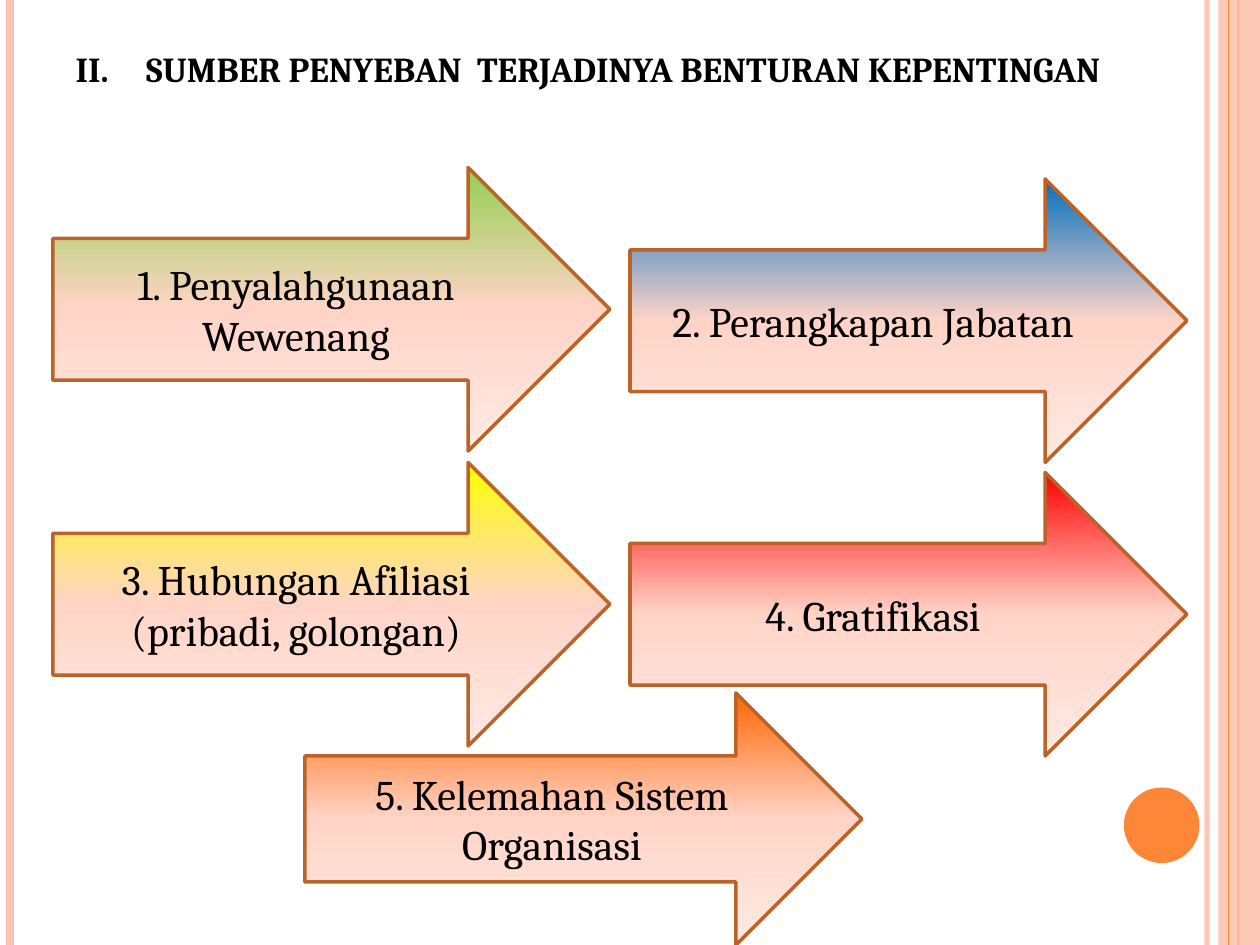
from copy import deepcopy
from dataclasses import dataclass

from lxml import etree
from pptx import Presentation
from pptx.dml.color import RGBColor
from pptx.enum import shapes, text
from pptx.oxml.ns import qn
from pptx.util import Inches, Pt


@dataclass(frozen=True)
class Theme:
    font: str = "Cambria"
    heading_size: int = 20
    label_size: int = 24
    ink: str = "000000"
    accent: str = "FE8637"
    pale: str = "FEC3AE"
    outline: str = "BC6329"
    middle: str = "FFD4C7"
    bottom: str = "FFEAE4"


theme = Theme()


def set_opacity(element, percent):
    color = element.find(".//" + qn("a:srgbClr"))
    etree.SubElement(color, qn("a:alpha")).set("val", str(percent * 1000))


def add_text(para, words, size, bold=False):
    span = para.add_run()
    span.text = words
    span.font.name = theme.font
    span.font.size = Pt(size)
    span.font.bold = bold
    span.font.color.rgb = RGBColor.from_string(theme.ink)


deck = Presentation()
deck.slide_width, deck.slide_height = Inches(10), Inches(7.5)
page = deck.slides.add_slide(deck.slide_layouts[1])
title = page.shapes.title
title.element.getparent().remove(title.element)

# Side stripes: x, colour, width, opacity; the band lies under the last line
stripes = [
    (9.58, theme.pale, 3, 93),
    (0.08, theme.pale, 4.5, 100),
    (9.83, theme.accent, 1.5, 100),
    (9.75, theme.accent, 0.75, 100),
]
for x, color, width, opacity in stripes:
    if x == 9.75:
        band = page.shapes.add_shape(shapes.MSO_SHAPE.RECTANGLE, Inches(9.67), 0,
                                     Inches(0.33), Inches(7.5))
        band.shadow.inherit = False
        band.fill.solid()
        band.fill.fore_color.rgb = RGBColor.from_string(theme.pale)
        set_opacity(band.element.spPr, 87)
        band.line.fill.background()
    stripe = page.shapes.add_connector(shapes.MSO_CONNECTOR.STRAIGHT, Inches(x), 0,
                                       Inches(x), Inches(7.5))
    stripe.line.color.rgb = RGBColor.from_string(color)
    stripe.line.width = Pt(width)
    if opacity < 100:
        set_opacity(stripe.line._ln, opacity)
    etree.SubElement(stripe._element.spPr, qn("a:effectLst"))

# Corner disc
disc = page.shapes.add_shape(shapes.MSO_SHAPE.OVAL, Inches(8.92), Inches(6.25),
                             Inches(0.6), Inches(0.6))
disc.shadow.inherit = False
disc.fill.solid()
disc.fill.fore_color.rgb = RGBColor.from_string(theme.accent)
disc.line.fill.background()

# Numbered heading, in front of the decoration
body = page.placeholders[1]
body.left, body.top = Inches(0.5), Inches(0.33)
body.width, body.height = Inches(8.92), Inches(6.75)
page.shapes._spTree.append(body.element)
para = body.text_frame.paragraphs[0]
para.alignment = text.PP_ALIGN.JUSTIFY
para.space_before = Pt(6)
add_text(para, "SUMBER PENYEBAN  TERJADINYA BENTURAN KEPENTINGAN",
         theme.heading_size, bold=True)
properties = para._p.get_or_add_pPr()
properties.set("marL", str(Inches(0.56)))
properties.set("indent", str(Inches(-0.56)))
number = etree.SubElement(properties, qn("a:buAutoNum"))
number.set("type", "romanUcPeriod")
number.set("startAt", "2")

# Source arrows: label, top colour, left, top, height
arrows = [
    ("1. Penyalahgunaan Wewenang", "92D050", 0.42, 1.33, 2.25),
    ("2. Perangkapan Jabatan", "0070C0", 5, 1.42, 2.25),
    ("3. Hubungan Afiliasi (pribadi, golongan)", "FFFF00", 0.42, 3.67, 2.25),
    ("4. Gratifikasi", "FF0000", 5, 3.75, 2.25),
    ("5. Kelemahan Sistem Organisasi", "FF6600", 2.42, 5.5, 2),
]
for label, color, left, top, height in arrows:
    arrow = page.shapes.add_shape(shapes.MSO_SHAPE.RIGHT_ARROW, Inches(left), Inches(top),
                                  Inches(4.42), Inches(height))
    arrow.shadow.inherit = False
    arrow.line.color.rgb = RGBColor.from_string(theme.outline)
    arrow.line.width = Pt(2)

    # Three-stop gradient running downwards
    arrow.fill.gradient()
    arrow.fill.gradient_angle = 270
    stop_list = arrow.element.spPr.find(".//" + qn("a:gsLst"))
    stop_list.append(deepcopy(stop_list[-1]))
    stop_colors = (color, theme.middle, theme.bottom)
    for stop, stop_color, position in zip(arrow.fill.gradient_stops, stop_colors, (0, 0.5, 1)):
        stop.color.rgb = RGBColor.from_string(stop_color)
        stop.position = position

    frame = arrow.text_frame
    frame.word_wrap = True
    frame.vertical_anchor = text.MSO_ANCHOR.MIDDLE
    frame.paragraphs[0].alignment = text.PP_ALIGN.CENTER
    add_text(frame.paragraphs[0], label, theme.label_size)

deck.save("out.pptx")
